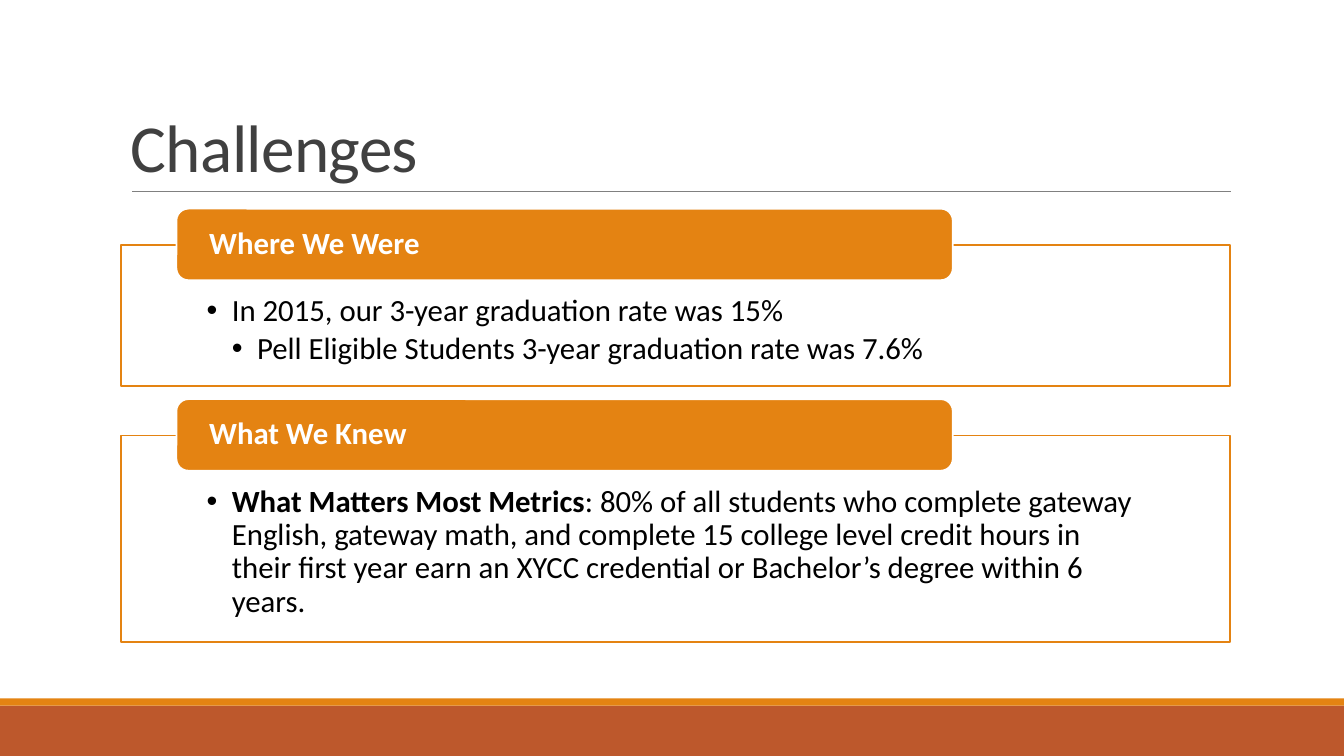
from lxml import etree
from pptx import Presentation
from pptx.dml.color import RGBColor
from pptx.enum import shapes, text
from pptx.oxml.ns import qn
from pptx.util import Inches, Pt

FONT = "Calibri"
ORANGE, RUST, GREY = "E48312", "BD582C", "808080"
WHITE, BLACK, DARK = "FFFFFF", "000000", "404040"

TITLE = "Challenges"
# Each bullet is (level, [(words, bold), ...]); top and height belong to the frame.
SECTIONS = [
    {"heading": "Where We Were", "top": 2.43, "height": 1.4, "bullets": [
        (1, [("In 2015, our 3-year graduation rate was 15%", False)]),
        (2, [("Pell Eligible Students 3-year graduation rate was 7.6%", False)]),
    ]},
    {"heading": "What We Knew", "top": 4.32, "height": 2.05, "bullets": [
        (1, [("What Matters Most Metrics", True),
             (": 80% of all students who complete gateway English, gateway math, "
              "and complete 15 college level credit hours in their first year earn "
              "an XYCC credential or Bachelor’s degree within 6 years.", False)]),
    ]},
]
BANDS = [(7, 0.5, RUST), (6.93, 0.07, ORANGE)]  # top, height, fill

SLIDE_W, SLIDE_H = 13.33, 7.5
LEFT, WIDTH = 1.2, 11
TAB_LEFT, TAB_WIDTH, TAB_HEIGHT = 1.75, 7.7, 0.71
TAB_RISE = 0.36
INDENT = 0.25


def color(hex_code):
    return RGBColor.from_string(hex_code)


def add_box(slide, kind, box, fill, line=None):
    shape = slide.shapes.add_shape(kind, *map(Inches, box))
    shape.shadow.inherit = False
    shape.fill.solid()
    shape.fill.fore_color.rgb = color(fill)
    if line:
        shape.line.color.rgb = color(line)
        shape.line.width = Pt(1.25)
    else:
        shape.line.fill.background()
    return shape


def write(shape, paragraphs, *, size, ink, insets, anchor="TOP", spacing=0.9,
          after=0, tracking=None):
    """Fill a shape with (level, runs) paragraphs; level 0 has no bullet."""
    frame = shape.text_frame
    frame.word_wrap = True
    frame.vertical_anchor = text.MSO_ANCHOR[anchor]
    (frame.margin_left, frame.margin_top,
     frame.margin_right, frame.margin_bottom) = map(Inches, insets)
    for number, (level, runs) in enumerate(paragraphs):
        paragraph = frame.add_paragraph() if number else frame.paragraphs[0]
        paragraph.alignment = text.PP_ALIGN.LEFT
        paragraph.line_spacing = spacing
        paragraph.space_after = Pt(after)
        if level:
            paragraph.level = level
            props = paragraph._p.get_or_add_pPr()
            props.set("marL", str(Inches(INDENT * level)))
            props.set("indent", str(-Inches(INDENT)))
            etree.SubElement(props, qn("a:buFont")).set("typeface", "Arial")
            etree.SubElement(props, qn("a:buChar")).set("char", "•")
        for words, bold in runs:
            run = paragraph.add_run()
            run.text = words
            run.font.name, run.font.size, run.font.bold = FONT, Pt(size), bold
            run.font.color.rgb = color(ink)
            if tracking:
                run.font._element.set("spc", str(int(tracking * 100)))


def add_rule(slide, left, right, y):
    rule = slide.shapes.add_connector(
        shapes.MSO_CONNECTOR.STRAIGHT, *map(Inches, (left, y, right, y)))
    rule.line.color.rgb = color(GREY)
    rule.line.width = Pt(0.5)
    etree.SubElement(rule._element.spPr, qn("a:effectLst"))


def add_section(slide, section):
    top = section["top"]
    frame = add_box(slide, shapes.MSO_SHAPE.RECTANGLE,
                    (LEFT, top, WIDTH, section["height"]), WHITE, ORANGE)
    write(frame, section["bullets"], size=22, ink=BLACK,
          insets=(0.85, 0.5, 0.85, 0.17), after=3.3)
    tab = add_box(slide, shapes.MSO_SHAPE.ROUNDED_RECTANGLE,
                  (TAB_LEFT, top - TAB_RISE, TAB_WIDTH, TAB_HEIGHT), ORANGE, WHITE)
    write(tab, [(0, [(section["heading"], True)])], size=22, ink=WHITE,
          insets=(0.29, 0, 0.29, 0), anchor="MIDDLE")


def main():
    deck = Presentation()
    deck.slide_width, deck.slide_height = Inches(SLIDE_W), Inches(SLIDE_H)
    slide = deck.slides.add_slide(deck.slide_layouts[6])

    for top, height, fill in BANDS:
        add_box(slide, shapes.MSO_SHAPE.RECTANGLE, (0, top, SLIDE_W, height), fill)
    add_rule(slide, 1.31, 12.21, 1.9)

    title = slide.shapes.add_textbox(*map(Inches, (LEFT, 0.31, WIDTH, 1.59)))
    write(title, [(0, [(TITLE, False)])], size=48, ink=DARK,
          insets=(0.1, 0.05, 0.1, 0.05), anchor="BOTTOM", spacing=0.85, tracking=-0.5)

    for section in SECTIONS:
        add_section(slide, section)
    deck.save("out.pptx")


if __name__ == "__main__":
    main()
